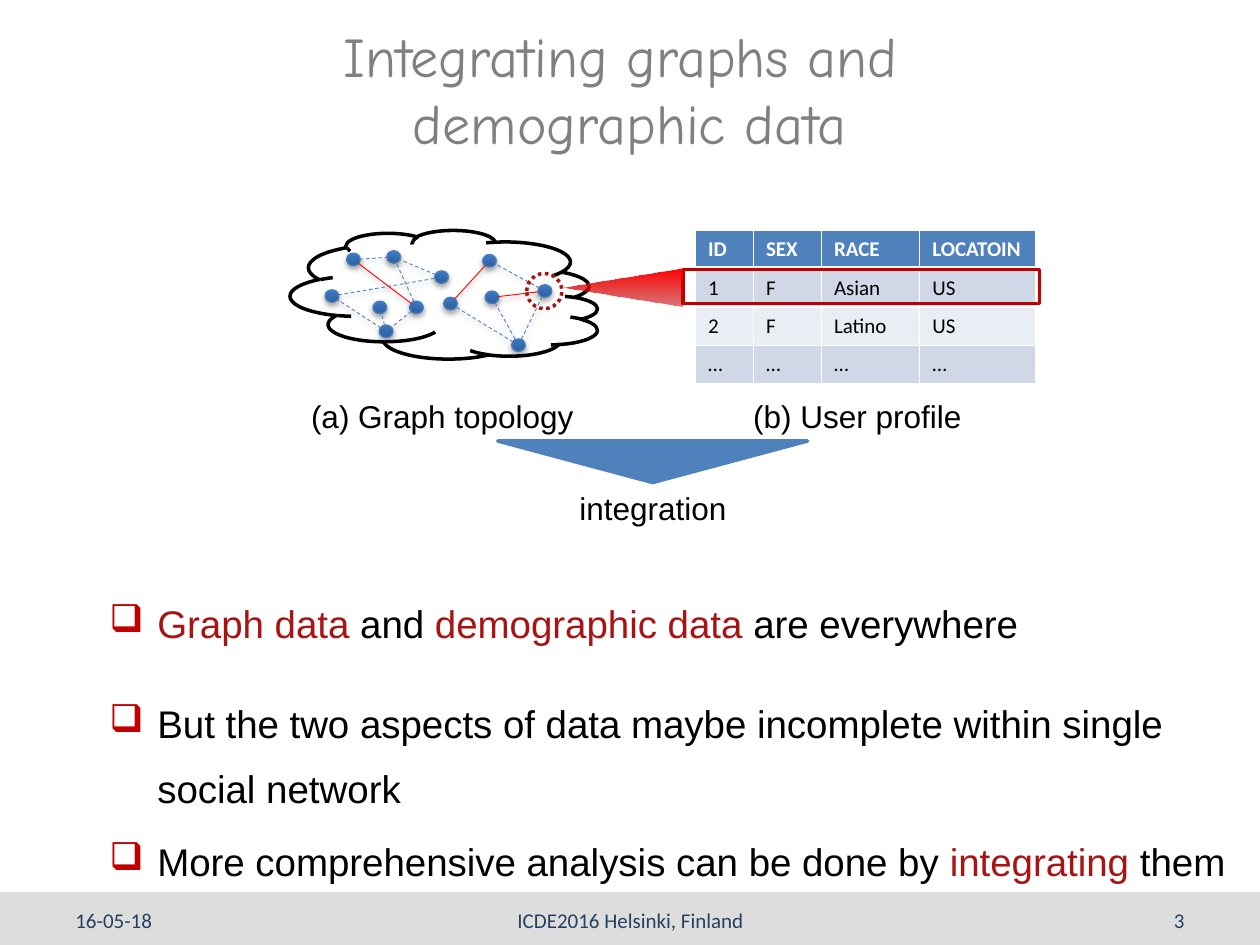
from math import hypot
from typing import NamedTuple

from lxml import etree
from pptx import Presentation
from pptx.dml.color import RGBColor
from pptx.enum.dml import MSO_LINE
from pptx.enum.shapes import MSO_CONNECTOR, MSO_SHAPE
from pptx.enum.text import MSO_ANCHOR, PP_ALIGN
from pptx.oxml.ns import qn
from pptx.util import Inches, Pt

LEFT, MID, RIGHT = PP_ALIGN.LEFT, PP_ALIGN.CENTER, PP_ALIGN.RIGHT
TOP, MIDDLE = MSO_ANCHOR.TOP, MSO_ANCHOR.MIDDLE
RECT, OVAL, CLOUD = MSO_SHAPE.RECTANGLE, MSO_SHAPE.OVAL, MSO_SHAPE.CLOUD
WEDGE = MSO_SHAPE.ISOSCELES_TRIANGLE
DASH, DOTTED = MSO_LINE.DASH, MSO_LINE.ROUND_DOT

BLACK, WHITE = RGBColor(0, 0, 0), RGBColor(255, 255, 255)
GRAY, PALE = RGBColor(0x80, 0x80, 0x80), RGBColor(0xDD, 0xDD, 0xDD)
NAVY, BLUE = RGBColor(0x25, 0x40, 0x61), RGBColor(0x4F, 0x81, 0xBD)
RED, CRIMSON = RGBColor(0xFF, 0, 0), RGBColor(0xC0, 0, 0)
WINE = RGBColor(0xA9, 0x13, 0x13)
DEEP, BRIGHT = RGBColor(0x2F, 0x5F, 0x99), RGBColor(0x3A, 0x7C, 0xCB)
RIM = RGBColor(0x4B, 0x7E, 0xBC)
BAND, LIGHT = RGBColor(0xD0, 0xD8, 0xE8), RGBColor(0xE9, 0xED, 0xF4)

CELL = Inches(0.1)  # the slide is a grid of 100 columns and 75 rows


class Box(NamedTuple):
    col: float
    row: float
    wide: float
    high: float


class Label(NamedTuple):
    text: str
    box: Box
    size: int
    font: str
    color: RGBColor
    align: PP_ALIGN = LEFT
    anchor: MSO_ANCHOR = TOP
    wrap: bool = True


class Node(NamedTuple):
    col: float
    row: float


class Edge(NamedTuple):
    start: str
    end: str
    strong: bool = False


LABELS = [
    Label("Integrating graphs and \vdemographic data", Box(5, 0.8, 90, 12.5),
          32, "Comic Neue", GRAY, MID, MIDDLE),
    Label("16-05-18", Box(5, 71, 23.3, 4), 12, "Calibri", NAVY, LEFT, MIDDLE),
    Label("ICDE2016 Helsinki, Finland", Box(34.2, 71, 31.7, 4),
          12, "Calibri", NAVY, MID, MIDDLE),
    Label("3", Box(71.7, 71, 23.3, 4), 12, "Calibri", NAVY, RIGHT, MIDDLE),
    Label("(a) Graph topology", Box(23.7, 31, 23.1, 4), 18, "Arial", BLACK, wrap=False),
    Label("(b) User profile", Box(58.8, 31, 18.7, 4), 18, "Arial", BLACK, wrap=False),
    Label("integration", Box(45, 38.3, 13.8, 4), 18, "Arial", BLACK, wrap=False),
]

NODES = {
    "a": Node(43.25, 23.1), "b": Node(38.85, 20.7), "c": Node(41.15, 27.4),
    "d": Node(35.75, 24.1), "e": Node(39.05, 23.6), "f": Node(33.05, 24.4),
    "g": Node(35.05, 22), "h": Node(30.65, 26.3), "i": Node(31.25, 20.4),
    "j": Node(28.05, 20.6), "k": Node(30.15, 24.4), "l": Node(26.35, 23.5),
}
EDGES = [Edge(*pair) for pair in ("ec", "ab", "ac", "cd", "fh", "gi", "ji", "hk", "hl", "fi", "lg")]
EDGES += [Edge(*pair, True) for pair in ("ae", "bd", "fj")]

WIDTHS = [4.6, 5.4, 7.8, 9.2]
ROWS = [
    ["ID", "SEX", "RACE", "LOCATOIN"],
    ["1", "F", "Asian", "US"],
    ["2", "F", "Latino", "US"],
    ["…"] * 4,
]

# Each point is a list of (text, colour) runs.
FIRST = [[("Graph data ", WINE), ("and ", BLACK),
          ("demographic data ", WINE), ("are everywhere", BLACK)]]
REST = [
    [("But the two aspects of data maybe incomplete within single social network", BLACK)],
    [("More comprehensive analysis can be done by ", BLACK),
     ("integrating ", WINE), ("them", BLACK)],
]


def grid(*spans: float) -> list[int]:
    return [round(span * CELL) for span in spans]


def child(parent, tag: str, **attrs):
    return etree.SubElement(parent, qn(tag), {k: str(v) for k, v in attrs.items()})


def shade(item, alpha: int, dist: float) -> None:
    """Give a dot or an edge a soft shadow straight below it."""
    effects = child(item._element.spPr, "a:effectLst")
    shadow = child(effects, "a:outerShdw", blurRad=Pt(3.1), dist=Pt(dist),
                   dir=5400000, rotWithShape=0)
    color = child(shadow, "a:srgbClr", val=BLACK)
    child(color, "a:alpha", val=alpha * 1000)


def style(font, size: int, name: str, color: RGBColor, bold: bool = False) -> None:
    font.size, font.name, font.bold = Pt(size), name, bold
    font.color.rgb = color


def draw(slide, kind, box: Box, fill=None, line=None, weight=2.0, turn=0, dash=None):
    shape = slide.shapes.add_shape(kind, *grid(*box))
    shape.rotation = turn
    if fill:
        shape.fill.solid()
        shape.fill.fore_color.rgb = fill
    else:
        shape.fill.background()
    if line:
        shape.line.color.rgb = line
        shape.line.width = Pt(weight)
        if dash:
            shape.line.dash_style = dash
    else:
        shape.line.fill.background()
    shape.shadow.inherit = False
    return shape


def blend(shape, first: RGBColor, last: RGBColor, angle: int) -> None:
    shape.fill.gradient()
    shape.fill.gradient_angle = angle
    for stop, color in zip(shape.fill.gradient_stops, (first, last)):
        stop.color.rgb = color


def write(slide, label: Label) -> None:
    frame = slide.shapes.add_textbox(*grid(*label.box)).text_frame
    frame.word_wrap = label.wrap
    frame.vertical_anchor = label.anchor
    frame.text = label.text
    para = frame.paragraphs[0]
    para.alignment = label.align
    for run in para.runs:
        style(run.font, label.size, label.font, label.color)


def bullets(slide, box: Box, points: list, spacing: float) -> None:
    frame = slide.shapes.add_textbox(*grid(*box)).text_frame
    frame.word_wrap = True
    for i, point in enumerate(points):
        para = frame.add_paragraph() if i else frame.paragraphs[0]
        para.line_spacing = spacing
        para.space_before = Pt(5 if i else 0)
        props = para._p.get_or_add_pPr()
        props.set("marL", str(Inches(0.38)))
        props.set("indent", str(-Inches(0.38)))
        child(child(props, "a:buClr"), "a:srgbClr", val=CRIMSON)
        child(props, "a:buChar", char="❑")
        for text, color in point:
            run = para.add_run()
            run.text = text
            style(run.font, 22, "Arial", color)


def profile(slide) -> None:
    spot = grid(55.2, 18.3, sum(WIDTHS), 3 * len(ROWS))
    table = slide.shapes.add_table(len(ROWS), len(WIDTHS), *spot).table
    for column, wide in zip(table.columns, grid(*WIDTHS)):
        column.width = wide
    for i, row in enumerate(ROWS):
        for j, text in enumerate(row):
            cell = table.cell(i, j)
            props = cell._tc.get_or_add_tcPr()
            for side in "LRTB":
                thick = (i, side) in ((0, "B"), (1, "T"))
                line = child(props, f"a:ln{side}", w=Pt(3 if thick else 1))
                child(child(line, "a:solidFill"), "a:srgbClr", val=WHITE)
            cell.fill.solid()
            cell.fill.fore_color.rgb = BLUE if i == 0 else BAND if i % 2 else LIGHT
            cell.text = text
            font = cell.text_frame.paragraphs[0].runs[0].font
            style(font, 12, "Calibri", BLACK if i else WHITE, bold=i == 0)


def link(slide, edge: Edge) -> None:
    """Join the rims of two nodes."""
    a, b = NODES[edge.start], NODES[edge.end]
    dx, dy = b.col - a.col, b.row - a.row
    part = 0.5 / hypot(dx, dy)
    ends = grid(a.col + dx * part, a.row + dy * part, b.col - dx * part, b.row - dy * part)
    line = slide.shapes.add_connector(MSO_CONNECTOR.STRAIGHT, *ends)
    line.line.color.rgb = RED if edge.strong else BLUE
    line.line.width = Pt(0.5)
    if not edge.strong:
        line.line.dash_style = DASH
    shade(line, 38, 1.6)


def graph(slide) -> None:
    draw(slide, CLOUD, Box(30.2, 11.2, 10.2, 24.4), WHITE, BLACK, turn=90)
    for node in NODES.values():
        dot = slide.shapes.add_shape(OVAL, *grid(node.col - 0.55, node.row - 0.5, 1.1, 1))
        blend(dot, DEEP, BRIGHT, 90)
        dot.line.color.rgb, dot.line.width = RIM, Pt(0.75)
        shade(dot, 35, 1.8)
    for edge in EDGES:
        link(slide, edge)


def main() -> None:
    deck = Presentation()
    deck.slide_width, deck.slide_height = grid(100, 75)
    slide = deck.slides.add_slide(deck.slide_layouts[6])
    draw(slide, RECT, Box(-0.2, 70.8, 100.2, 4.2), PALE)
    profile(slide)
    graph(slide)
    bullets(slide, Box(7.7, 45.3, 92.3, 7.5), FIRST, 1.5)
    bullets(slide, Box(7.7, 53.6, 91.5, 17.5), REST, 1.4)
    draw(slide, RECT, Box(54.2, 21.4, 28.3, 2.7), line=CRIMSON)
    draw(slide, OVAL, Box(41.8, 21.7, 2.8, 2.8), line=WINE, dash=DOTTED)
    beam = draw(slide, WEDGE, Box(47.9, 18.1, 3, 9.5), turn=270)
    blend(beam, RED, CRIMSON, 180)
    child(list(beam._element.iter(qn("a:srgbClr")))[-1], "a:alpha", val=52000)
    draw(slide, WEDGE, Box(39.5, 35, 24.6, 3.3), BLUE, BLUE, turn=180)
    for label in LABELS:
        write(slide, label)
    deck.save("out.pptx")


if __name__ == "__main__":
    main()
